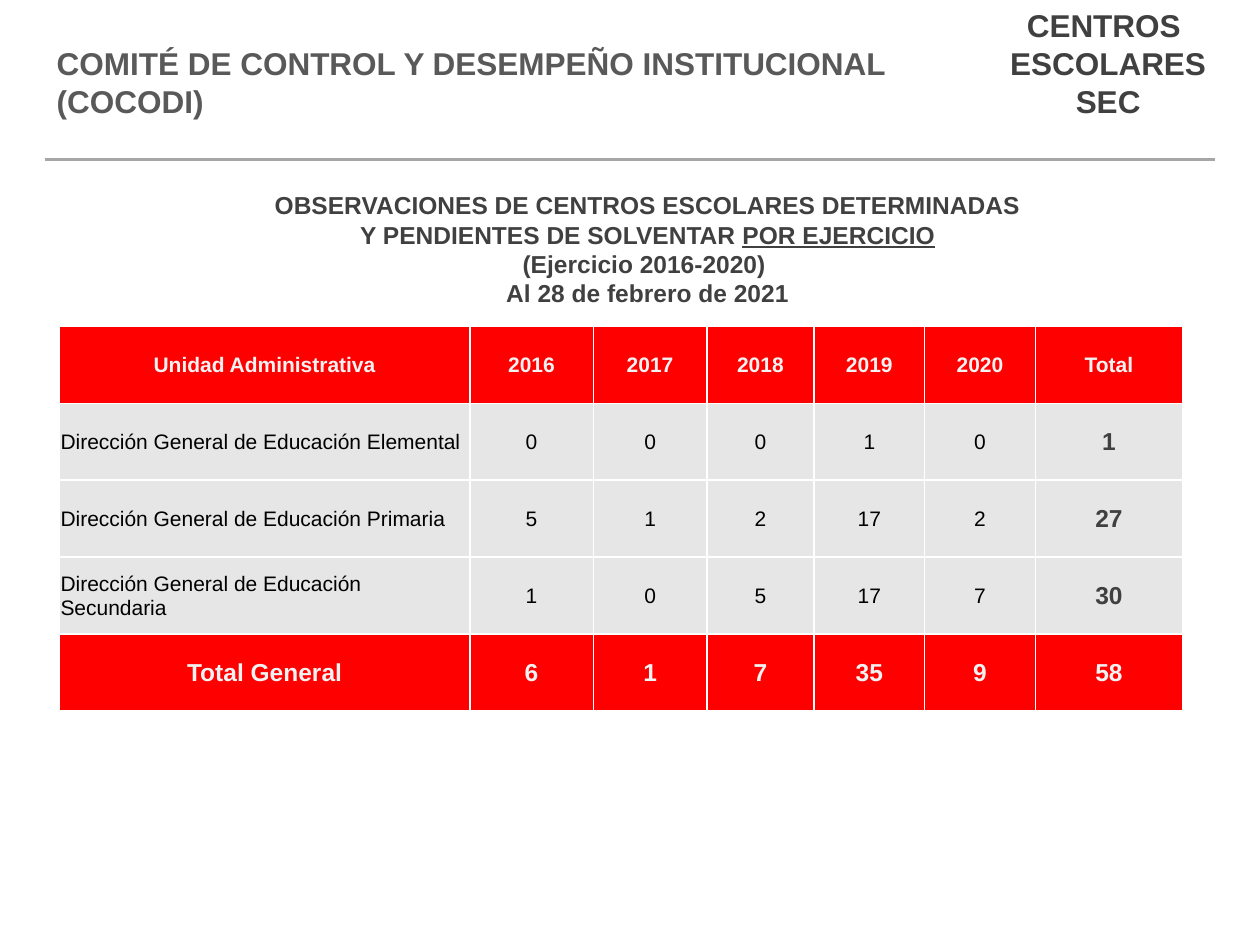
import copy

import pptx
import pptx.dml.color
import pptx.enum.shapes
import pptx.enum.text
import pptx.oxml
import pptx.oxml.ns
import pptx.util
from pptx.util import Cm

COLORS = {
    "white": "FFFFFF",
    "heading": "595959",
    "dark": "404040",
    "rule": "A6A6A6",
    "red": "FF0000",
    "gray": "E7E6E6",
    "light": "F2F2F2",
    "black": "000000",
}
LEFT = pptx.enum.text.PP_ALIGN.LEFT
CENTER = pptx.enum.text.PP_ALIGN.CENTER
MIDDLE = pptx.enum.text.MSO_ANCHOR.MIDDLE
TOP = pptx.enum.text.MSO_ANCHOR.TOP


def color(name):
    return pptx.dml.color.RGBColor.from_string(COLORS[name])


def write_text(frame, text, size=18, fill="dark", bold=True, align=CENTER, font="Arial", underlined=""):
    for index, line in enumerate(text.split("\n")):
        paragraph = frame.paragraphs[0] if index == 0 else frame.add_paragraph()
        paragraph.alignment = align
        paragraph.text = line
        if underlined and line.endswith(underlined):
            paragraph.runs[0].text = line.removesuffix(underlined)
            run = paragraph.add_run()
            run.text = underlined
            run.font.underline = True
        for run in paragraph.runs:
            run.font.size = pptx.util.Pt(size)
            run.font.name = font
            run.font.bold = bold
            run.font.color.rgb = color(fill)
        for line_break in paragraph._p.findall(pptx.oxml.ns.qn("a:br")):
            line_break.append(copy.deepcopy(paragraph.runs[0]._r.rPr))


class SlideBuilder:
    def __init__(self, presentation):
        self.slide = presentation.slides.add_slide(presentation.slide_layouts[5])

    def fit(self, frame, anchor):
        frame.word_wrap = True
        frame.auto_size = pptx.enum.text.MSO_AUTO_SIZE.SHAPE_TO_FIT_TEXT
        frame.vertical_anchor = anchor

    def title(self, box, text, **text_format):
        shape = self.slide.shapes.title
        shape.left, shape.top, shape.width, shape.height = box
        self.fit(shape.text_frame, TOP)
        write_text(shape.text_frame, text, **text_format)

    def text(self, box, text, **text_format):
        shape = self.slide.shapes.add_textbox(*box)
        self.fit(shape.text_frame, TOP)
        write_text(shape.text_frame, text, **text_format)

    def block(self, box, text, fill, **text_format):
        shape = self.slide.shapes.add_shape(pptx.enum.shapes.MSO_SHAPE.RECTANGLE, *box)
        shape.shadow.inherit = False
        shape.fill.solid()
        shape.fill.fore_color.rgb = color(fill)
        shape.line.fill.background()
        self.fit(shape.text_frame, TOP)
        write_text(shape.text_frame, text, **text_format)

    def rule(self, left, right, top):
        connector = self.slide.shapes.add_connector(
            pptx.enum.shapes.MSO_CONNECTOR.STRAIGHT, left, top, right, top)
        connector.line.color.rgb = color("rule")
        connector.line.width = pptx.util.Pt(1.5)
        connector._element.spPr.append(
            pptx.oxml.parse_xml(f'<a:effectLst {pptx.oxml.ns.nsdecls("a")}/>'))

    def cell_borders(self, cell):
        properties = cell._tc.get_or_add_tcPr()
        for position, side in enumerate(("lnL", "lnR", "lnT", "lnB")):
            border = pptx.oxml.parse_xml(
                f'<a:{side} {pptx.oxml.ns.nsdecls("a")} w="12700"><a:solidFill>'
                f'<a:srgbClr val="{COLORS["white"]}"/></a:solidFill></a:{side}>')
            properties.insert(position, border)

    def table(self, left, top, widths, row_height, rows):
        shape = self.slide.shapes.add_table(
            len(rows), len(widths), left, top, sum(widths), row_height * len(rows))
        table = shape.table
        for column, width in zip(table.columns, widths):
            column.width = width
        last_row, last_column = len(rows) - 1, len(widths) - 1
        for row_index, values in enumerate(rows):
            table.rows[row_index].height = row_height
            banner = row_index in (0, last_row)
            for column_index, value in enumerate(values):
                total = row_index == last_row or (column_index == last_column and not banner)
                cell = table.cell(row_index, column_index)
                cell.margin_left = cell.margin_right = cell.margin_top = Cm(0.02)
                cell.margin_bottom = 0
                cell.vertical_anchor = MIDDLE
                cell.fill.solid()
                cell.fill.fore_color.rgb = color("red" if banner else "gray")
                self.cell_borders(cell)
                write_text(
                    cell.text_frame, str(value),
                    size=14 if total else 12,
                    fill="light" if banner else "dark" if total else "black",
                    bold=banner or total,
                    align=LEFT if column_index == 0 and not banner else CENTER)


def main():
    presentation = pptx.Presentation()
    presentation.slide_width = Cm(25.4)
    presentation.slide_height = Cm(19.05)
    builder = SlideBuilder(presentation)

    builder.text(
        (Cm(3.2), Cm(3.71), Cm(19.71), Cm(2.64)),
        "OBSERVACIONES DE CENTROS ESCOLARES DETERMINADAS\n"
        "Y PENDIENTES DE SOLVENTAR POR EJERCICIO\n"
        "(Ejercicio 2016-2020) \n"
        "Al 28 de febrero de 2021",
        size=14, underlined="POR EJERCICIO")
    builder.title(
        (Cm(0.89), Cm(0.76), Cm(17.83), Cm(1.8)),
        "COMITÉ DE CONTROL Y DESEMPEÑO INSTITUCIONAL\v(COCODI)",
        fill="heading", align=LEFT)
    builder.rule(Cm(0.9), Cm(24.5), Cm(3.22))

    years = range(2016, 2021)
    observations = {
        "Dirección General de Educación Elemental": [0, 0, 0, 1, 0],
        "Dirección General de Educación Primaria": [5, 1, 2, 17, 2],
        "Dirección General de Educación Secundaria": [1, 0, 5, 17, 7],
    }
    year_totals = [sum(counts) for counts in zip(*observations.values())]
    rows = [["Unidad Administrativa", *years, "Total"]]
    rows += [[unit, *counts, sum(counts)] for unit, counts in observations.items()]
    rows.append(["Total General", *year_totals, sum(year_totals)])
    widths = [Cm(width) for width in (8.27, 2.49, 2.29, 2.16, 2.23, 2.23, 2.97)]
    builder.table(Cm(1.2), Cm(6.58), widths, Cm(1.55), rows)

    builder.block(
        (Cm(19.61), 0, Cm(5.46), Cm(2.57)),
        "CENTROS \nESCOLARES\nSEC", fill="white")
    presentation.save("out.pptx")


if __name__ == "__main__":
    main()
